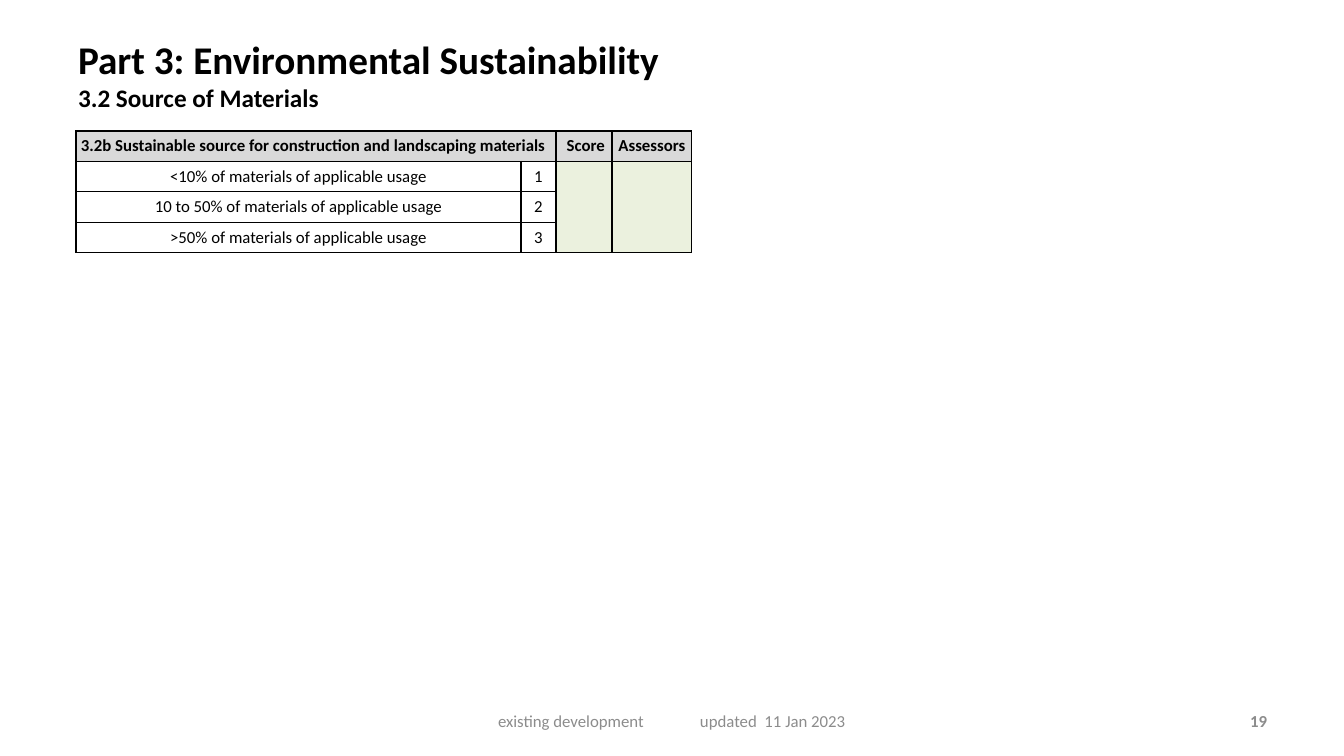
"""Builds the scoring slide for sustainable sources of materials."""
from lxml import etree
from pptx import Presentation
from pptx.dml.color import RGBColor
from pptx.enum.text import MSO_ANCHOR, MSO_AUTO_SIZE, PP_ALIGN
from pptx.oxml.ns import qn
from pptx.util import Pt

PX = 914400 / 100.8
LEFT, CENTER, RIGHT = PP_ALIGN.LEFT, PP_ALIGN.CENTER, PP_ALIGN.RIGHT
TOP, MIDDLE = MSO_ANCHOR.TOP, MSO_ANCHOR.MIDDLE
NO_FIT = MSO_AUTO_SIZE.NONE
COLORS = {"text": "000000", "muted": "8C8C8C", "header": "D9D9D9",
          "option": "FFFFFF", "entry": "EBF1DE", "border": "000000"}


def px(length):
    return round(length * PX)


def write(paragraph, text, size=12, bold=False, color="text", align=LEFT):
    paragraph.alignment = align
    run = paragraph.add_run()
    run.text = text
    run.font.name = "Calibri"
    run.font.size = Pt(size)
    run.font.bold = bold
    run.font.color.rgb = RGBColor.from_string(COLORS[color])


prs = Presentation()
prs.slide_width, prs.slide_height = px(1344), px(756)
slide = prs.slides.add_slide(prs.slide_layouts[5])

title = slide.shapes.title
title.left, title.top, title.width, title.height = px(68), px(30), px(1044), px(100)
title.text_frame.vertical_anchor = TOP
title.text_frame.auto_size = NO_FIT
heading = title.text_frame.paragraphs[0]
write(heading, "Part 3: Environmental Sustainability", size=28, bold=True)
heading.add_line_break()
etree.SubElement(heading._p[-1], qn("a:rPr"), sz="2800")
write(heading, "3.2 Source of Materials", size=18, bold=True)

COLUMN_WIDTHS = [445, 35, 56, 80]
ROW_HEIGHT = 30
ROWS = [
    ["3.2b Sustainable source for construction and landscaping materials",
     "", " Score", "Assessors"],
    ["<10% of materials of applicable usage", "1", "", ""],
    ["10 to 50% of materials of applicable usage", "2", "", ""],
    [">50% of materials of applicable usage", "3", "", ""],
]
scores = slide.shapes.add_table(
    len(ROWS), len(COLUMN_WIDTHS), px(76), px(131),
    px(sum(COLUMN_WIDTHS)), px(ROW_HEIGHT * len(ROWS))).table
for column, width in zip(scores.columns, COLUMN_WIDTHS):
    column.width = px(width)
for row in scores.rows:
    row.height = px(ROW_HEIGHT)

for r, labels in enumerate(ROWS):
    for c, label in enumerate(labels):
        cell = scores.cell(r, c)
        is_header = r == 0
        fill = "header" if is_header else "option" if c < 2 else "entry"
        cell.fill.solid()
        cell.fill.fore_color.rgb = RGBColor.from_string(COLORS[fill])
        cell.vertical_anchor = MIDDLE
        cell.margin_left = cell.margin_right = px(5)
        cell.margin_top = cell.margin_bottom = px(5)
        if label:
            write(cell.text_frame.paragraphs[0], label, bold=is_header,
                  align=LEFT if is_header and c == 0 else CENTER)
        properties = cell._tc.get_or_add_tcPr()
        for position, side in enumerate(("lnL", "lnR", "lnT", "lnB")):
            border = etree.Element(qn(f"a:{side}"), w=str(Pt(1)))
            solid = etree.SubElement(border, qn("a:solidFill"))
            etree.SubElement(solid, qn("a:srgbClr"), val=COLORS["border"])
            properties.insert(position, border)

scores.cell(0, 0).merge(scores.cell(0, 1))
for c in (2, 3):
    scores.cell(1, c).merge(scores.cell(3, c))

FOOTERS = [
    (460, 425, 38, "existing development\tupdated  11 Jan 2023", False, LEFT),
    (964, 313, 10, "19", True, RIGHT),
]
for left, width, inset, text, bold, align in FOOTERS:
    footer = slide.shapes.add_textbox(px(left), px(701), px(width), px(40)).text_frame
    footer.word_wrap = True
    footer.vertical_anchor = MIDDLE
    footer.margin_left = px(inset)
    line = footer.paragraphs[0]
    if "\t" in text:
        tabs = etree.SubElement(line._p.get_or_add_pPr(), qn("a:tabLst"))
        etree.SubElement(tabs, qn("a:tab"), pos=str(px(202)), algn="l")
    write(line, text, bold=bold, color="muted", align=align)

prs.save("out.pptx")
